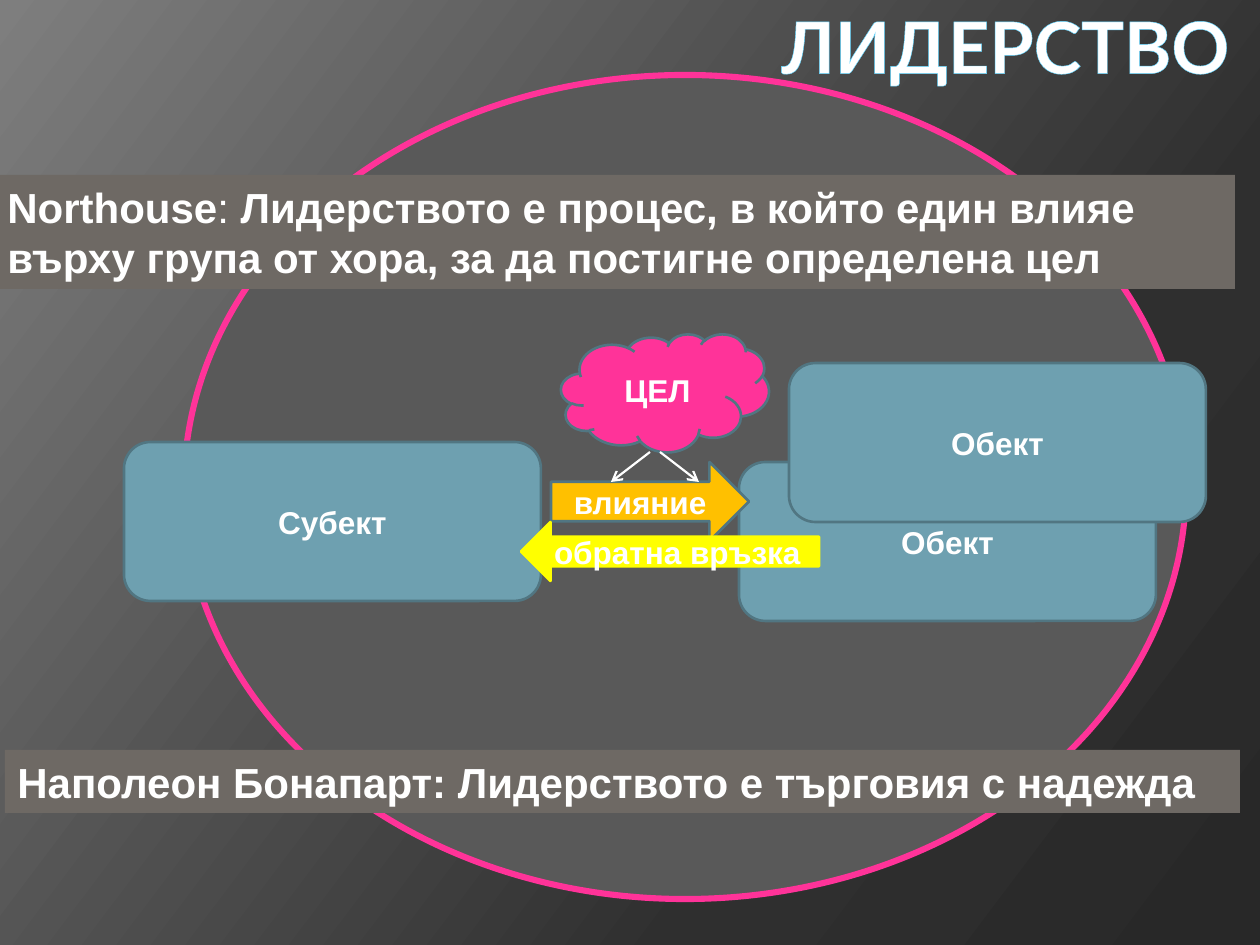
import copy
import pptx
import pptx.dml.color
import pptx.enum.shapes
import pptx.enum.text
import pptx.oxml
import pptx.oxml.ns
import pptx.util

RGB = pptx.dml.color.RGBColor
MSO = pptx.enum.shapes.MSO_SHAPE
ALIGN = pptx.enum.text.PP_ALIGN
ANCHOR = pptx.enum.text.MSO_ANCHOR
AUTO = pptx.enum.text.MSO_AUTO_SIZE
PX = 914400 / 126
NS = pptx.oxml.ns.nsdecls("a")

WHITE = RGB(0xFF, 0xFF, 0xFF)
PINK = RGB(0xFF, 0x33, 0x99)
DARK_GREY = RGB(0x59, 0x59, 0x59)
TEAL = RGB(0x6E, 0xA0, 0xB0)
TEAL_EDGE = RGB(0x51, 0x76, 0x82)
ORANGE = RGB(0xFF, 0xC0, 0x00)
YELLOW = RGB(0xFF, 0xFF, 0x00)
BAND = RGB(0x6E, 0x69, 0x64)
BG_STOPS = [(0, RGB(0x28, 0x28, 0x28)), (30, RGB(0x2F, 0x2F, 0x2F)),
            (100, RGB(0x7E, 0x7E, 0x7E))]


def px(*values):
    return [round(v * PX) for v in values]


def add_text(p, text, size=18, font="Arial", bold=True, align=ALIGN.CENTER):
    p.alignment = align
    r = p.add_run()
    r.text = text
    r.font.size = pptx.util.Pt(size)
    r.font.name = font
    r.font.bold = bold
    r.font.color.rgb = WHITE
    return r


prs = pptx.Presentation()
prs.slide_width, prs.slide_height = px(1260, 945)
s = prs.slides.add_slide(prs.slide_layouts[0])
subtitle = s.placeholders[1].element
subtitle.getparent().remove(subtitle)

bg = s.background.fill
bg.gradient()
bg.gradient_angle = 143
first = next(s.element.iter(pptx.oxml.ns.qn("a:gs")))
first.addnext(copy.deepcopy(first))
for stop, (pos, color) in zip(bg.gradient_stops, BG_STOPS):
    stop.position = pos / 100
    stop.color.rgb = color

title = s.shapes.title
title.left, title.top, title.width, title.height = px(343, -4, 893, 149)
tf = title.text_frame
tf.word_wrap = True
tf.auto_size = AUTO.NONE
tf.vertical_anchor = ANCHOR.TOP
tf.margin_left = tf.margin_right = tf.margin_top = tf.margin_bottom = px(6)[0]
r = add_text(tf.paragraphs[0], "ЛИДЕРСТВО", size=41, font="Lato", align=ALIGN.RIGHT)
r.font.element.insert(0, pptx.oxml.parse_xml(
    f'<a:ln {NS} w="5000"><a:solidFill><a:srgbClr val="5DD4FF"/></a:solidFill></a:ln>')) if hasattr(r.font, "element") else r._r.get_or_add_rPr().insert(0, pptx.oxml.parse_xml(
    f'<a:ln {NS} w="5000"><a:solidFill><a:srgbClr val="5DD4FF"/></a:solidFill></a:ln>'))

SHAPES = [
    (MSO.OVAL, (184, 75, 1002, 824), DARK_GREY, PINK, 3.5, ""),
    (MSO.ROUNDED_RECTANGLE, (124, 442, 417, 159), TEAL, TEAL_EDGE, 1.5, "Субект"),
    (MSO.ROUNDED_RECTANGLE, (739, 462, 417, 159), TEAL, TEAL_EDGE, 1.5, "Обект"),
    (MSO.ROUNDED_RECTANGLE, (789, 363, 417, 159), TEAL, TEAL_EDGE, 1.5, "Обект"),
    (MSO.RIGHT_ARROW, (551, 462, 198, 79), ORANGE, TEAL_EDGE, 1.5, "влияние"),
    (MSO.CLOUD, (561, 334, 208, 118), PINK, TEAL_EDGE, 1.5, "ЦЕЛ"),
    (MSO.LEFT_ARROW, (521, 522, 298, 59), YELLOW, YELLOW, 1.5, "обратна връзка"),
]
for kind, box, fill, edge, width, text in SHAPES:
    sp = s.shapes.add_shape(kind, *px(*box))
    sp.shadow.inherit = False
    sp.fill.solid()
    sp.fill.fore_color.rgb = fill
    sp.line.color.rgb = edge
    sp.line.width = pptx.util.Pt(width)
    if text:
        sp.text_frame.word_wrap = True
        sp.text_frame.vertical_anchor = ANCHOR.MIDDLE
        add_text(sp.text_frame.paragraphs[0], text)
    else:
        title.element.addprevious(sp.element)

for x1, x2 in [(650, 611), (660, 699)]:
    line = s.shapes.add_connector(pptx.enum.shapes.MSO_CONNECTOR.STRAIGHT,
                                  *px(x1, 452, x2, 482))
    line.line.color.rgb = WHITE
    line.line.width = pptx.util.Pt(1.25)
    line.line.fill.solid()
    line.line.fill.fore_color.rgb = WHITE
    ln = line.element.spPr.find(pptx.oxml.ns.qn("a:ln"))
    ln.append(pptx.oxml.parse_xml(f'<a:tailEnd {NS} type="arrow"/>'))
    line.element.spPr.append(pptx.oxml.parse_xml(f"<a:effectLst {NS}/>"))

BANDS = [
    ((-5, 175, 1240, 114), 0, [
        ("Nоrthouse", True), (": ", False),
        ("Лидерството е процес, в който един влияе върху група от хора, "
         "за да постигне определена цел", True)]),
    ((5, 750, 1235, 63), 63, [
        ("Наполеон Бонапарт: Лидерството е търговия с надежда", True)]),
]
for box, indent, runs in BANDS:
    sp = s.shapes.add_textbox(*px(*box))
    sp.fill.solid()
    sp.fill.fore_color.rgb = BAND
    tf = sp.text_frame
    tf.word_wrap = True
    tf.auto_size = AUTO.SHAPE_TO_FIT_TEXT
    p = tf.paragraphs[0]
    for text, bold in runs:
        add_text(p, text, size=24, bold=bold, align=ALIGN.LEFT)
    if indent:
        pPr = p._p.get_or_add_pPr()
        pPr.set("marL", str(px(indent)[0]))
        pPr.set("indent", str(px(-indent)[0]))

prs.save("out.pptx")
